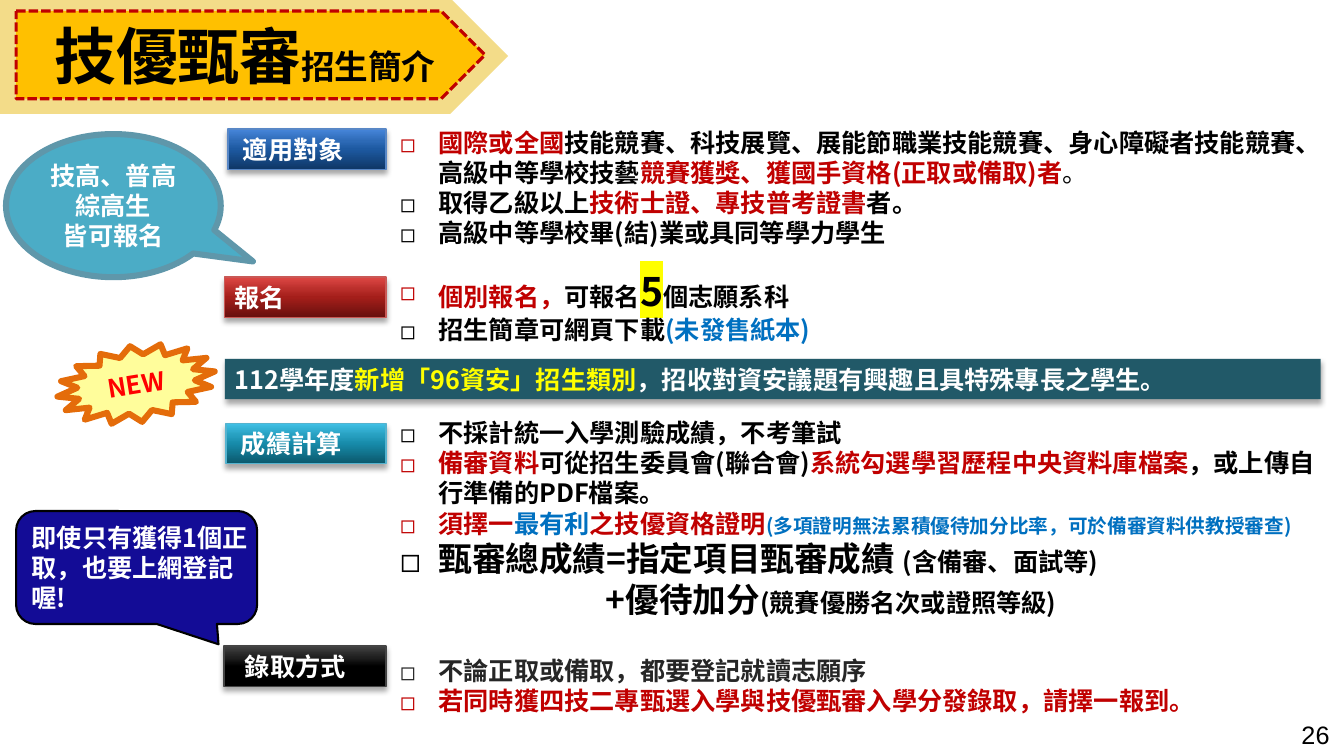
from collections import namedtuple
from pptx import Presentation
from pptx.dml.color import RGBColor as Rgb
from pptx.enum.dml import MSO_LINE as Dash
from pptx.enum.shapes import MSO_SHAPE as Kind
from pptx.enum.text import MSO_ANCHOR as Anchor, PP_ALIGN as Align
from pptx.oxml import parse_xml
from pptx.oxml.ns import nsdecls
from pptx.util import Inches, Pt

Box = namedtuple("Box", "col row wide high")
UNIT = 0.1  # one grid cell, in inches
LEFT, MID = Align.LEFT, Align.CENTER


class Theme:
    font, plain = "Noto Sans CJK SC", "Arial"
    note, body, head, big, title = 14, 18, 24, 28, 44
    lead = 1.2  # line height per type size
    ink, white, dark = "000000", "FFFFFF", "262626"
    red, blue, yellow = "C00000", "0070C0", "FFFF00"
    sand, gold = "F3DC89", "FFC000"
    aqua, rim, navy = "4BACC6", "5F97AA", "130C96"
    lemon, amber, alert, teal = "FFFD9B", "E46C0A", "FF0000", "215968"
    stops = (0, 50, 70, 100)
    tints = {
        "blue": ("0F3766", "1D59A1", "2D6AB6", "4786DB", "5887C6"),
        "red": ("68100E", "A41E1A", "B92E2A", "DF4845", "C95956"),
        "cyan": ("0B586C", "178BAA", "279FC0", "41C1E6", "54B3CF"),
        "black": ("000000", "000000", "1D1D1D", "424242", "444444"),
    }


T = Theme


def node(xml):
    return parse_xml(xml.replace(">", f" {nsdecls('a')}>", 1)
                     if "/>" not in xml.split(">")[0] + ">"
                     else xml.replace("/>", f" {nsdecls('a')}/>", 1))


def span(box):
    return [Inches(n * UNIT) for n in box]


def put(item, form):
    for key, val in form.items():
        setattr(item, key, val)


def frame(shape, pad=1, align_mid=True, wrap=True):
    put(shape.text_frame, {
        "word_wrap": wrap, "margin_left": Inches(pad * UNIT),
        "margin_right": 0, "margin_top": 0, "margin_bottom": 0,
        "vertical_anchor": Anchor.MIDDLE if align_mid else Anchor.TOP})


def write(para, runs, align=LEFT, font=T.font, bold=True):
    """Each run is text, colour, size, weight and highlight."""
    sizes = []
    for run in runs:
        text, hue, size, heavy, mark = (*run, *(T.ink, T.body, bold, None)[len(run) - 1:])
        part = para.add_run()
        part.text = text
        put(part.font, {"size": Pt(size), "bold": heavy, "name": font})
        part.font.color.rgb = Rgb.from_string(hue)
        latin = part.font._element.find(".//{*}latin")
        latin.addnext(node(f'<a:ea typeface="{font}"/>'))
        if mark:
            latin.addprevious(node(f'<a:highlight><a:srgbClr val="{mark}"/></a:highlight>'))
        sizes.append(size)
    put(para, {"alignment": align, "line_spacing": Pt(T.lead * max(sizes)),
               "space_before": Pt(0), "space_after": Pt(0)})


def shape(slide, kind, box, fill=None, line=None, width=1, adj=()):
    item = slide.shapes.add_shape(kind, *span(box))
    item.shadow.inherit = False
    if fill:
        item.fill.solid()
        item.fill.fore_color.rgb = Rgb.from_string(fill)
    if line:
        item.line.color.rgb = Rgb.from_string(line)
        item.line.width = Pt(width)
    else:
        item.line.fill.background()
    for num, val in enumerate(adj):
        item.adjustments[num] = val
    return item


def shade(item):
    item._element.spPr.find("{*}effectLst").append(node(
        '<a:outerShdw blurRad="50800" dist="38100" dir="5400000" rotWithShape="0">'
        '<a:srgbClr val="000000"><a:alpha val="35000"/></a:srgbClr></a:outerShdw>'))


def indent(para, left, hang=0):
    prop = para._p.get_or_add_pPr()
    prop.set("marL", str(Inches(left * UNIT)))
    prop.set("indent", str(-Inches(hang * UNIT)))
    if hang:
        prop.append(node(f'<a:buFont typeface="{T.font}"/>'))
        prop.append(node('<a:buChar char="◻"/>'))


# Title banner
def banner(slide, box):
    shape(slide, Kind.PENTAGON, box, T.sand)
    inner = Box(box.col + 1.6, box.row + 1.3, box.wide - 3.9, box.high - 2.8)
    plate = shape(slide, Kind.PENTAGON, inner, T.gold, T.red, 2.25)
    plate.line.dash_style = Dash.SQUARE_DOT
    title = slide.shapes.title
    put(title, dict(zip(("left", "top", "width", "height"), span(inner))))
    frame(title, 3.8)
    write(title.text_frame.paragraphs[0],
          [("技優甄審", T.ink, T.title), ("招生簡介", T.ink, T.head)])
    slide.shapes.element.append(title.element)  # bring to front


# Topic label with its list
def topic(slide, box, name, tint, pad, drop, items):
    *hues, edge = T.tints[tint]
    label = shape(slide, Kind.RECTANGLE, Box(box.col, box.row, 38.3 - box.col, 4), None, edge)
    stops = "".join(f'<a:gs pos="{pos * 1000}"><a:srgbClr val="{hue}"/></a:gs>'
                    for pos, hue in zip(T.stops, hues))
    label._element.spPr.find("{*}prstGeom").addnext(node(
        f'<a:gradFill rotWithShape="1"><a:gsLst>{stops}</a:gsLst>'
        '<a:lin ang="16200000" scaled="0"/></a:gradFill>'))
    shade(label)
    frame(label, pad)
    write(label.text_frame.paragraphs[0], [(name, T.white)])

    left = 38.7
    area = slide.shapes.add_textbox(*span(
        Box(left, box.row + drop, box.col + box.wide - left, box.high)))
    frame(area, 1, False)
    for num, (deep, runs) in enumerate(items):
        text = area.text_frame
        para = text.add_paragraph() if num else text.paragraphs[0]
        write(para, runs)
        indent(para, deep or 3.8, 0 if deep else 3.8)


# Callout, burst or bar holding one text
def note(slide, kind, box, look, lines, align=MID, pad=0, turn=0, wrap=True):
    item = shape(slide, kind, box, *look)
    item.rotation = turn
    frame(item, pad, wrap=wrap)
    for num, runs in enumerate(lines):
        text = item.text_frame
        write(text.add_paragraph() if num else text.paragraphs[0], runs, align)
    return item


# Page number
def folio(slide, box, num):
    area = slide.shapes.add_textbox(*span(box))
    frame(area)
    write(area.text_frame.paragraphs[0], [(num,)], font=T.plain, bold=False)


# Box, label, tint, label padding, list drop, list items (indent, runs)
TOPICS = [
    (Box(22.6, 12.8, 108.6, 12.2), "適用對象", "blue", 1.5, -0.2, [
        (0, [("國際或全國", T.red),
             ("技能競賽、科技展覽、展能節職業技能競賽、身心障礙者技能競賽、高級中等學校技藝",),
             ("競賽獲獎、獲國手資格(正取或備取)者", T.red), ("。", T.ink, T.body, False)]),
        (0, [("取得乙級以上",), ("技術士證、專技普考證書", T.red), ("者。",)]),
        (0, [("高級中等學校畢(結)業或具同等學力學生",)])]),
    (Box(22.3, 27.5, 108.9, 8), "報名", "red", 1, -1, [
        (0, [("個別報名，", T.red), ("可報名",),
             ("5", T.ink, T.big, True, T.yellow), ("個志願系科",)]),
        (0, [("招生簡章可網頁下載",), ("(未發售紙本)", T.blue)])]),
    (Box(22.4, 42, 108.8, 20), "成績計算", "cyan", 1.5, -0.6, [
        (0, [("不採計統一入學測驗成績，不考筆試",)]),
        (0, [("備審資料", T.red), ("可從招生委員會(聯合會)",),
             ("系統勾選學習歷程中央資料庫檔案", T.red), ("，或上傳自行準備的PDF檔案。",)]),
        (0, [("須擇一", T.red), ("最有利", T.blue), ("之技優資格證明", T.red),
             ("(多項證明無法累積優待加分比率，可於備審資料供教授審查)", T.blue, T.note)]),
        (0, [("甄審總成績=指定項目甄審成績 ", T.ink, T.head), ("(含備審、面試等)",)]),
        (20.4, [("+優待加分", T.ink, T.head), ("(競賽優勝名次或證照等級)",)])]),
    (Box(22.2, 64.1, 109, 6), "錄取方式", "black", 2.1, 0.9, [
        (0, [("不論正取或備取，都要登記就讀志願序", T.dark)]),
        (0, [("若同時獲四技二專甄選入學與技優甄審入學分發錄取，請擇一報到。", T.red)])]),
]


def main():
    deck = Presentation()
    put(deck, {"slide_width": Inches(13.33), "slide_height": Inches(7.5)})
    slide = deck.slides.add_slide(deck.slide_layouts[5])
    folio(slide, Box(128.1, 70.9, 5.2, 4), "26")
    banner(slide, Box(0, -0.2, 50.4, 11.5))
    for row in TOPICS:
        topic(slide, *row)
    note(slide, Kind.OVAL_CALLOUT, Box(0.6, 13.3, 21.3, 14.2),
         (T.aqua, T.rim, 4.33, (0.65, 0.39)),
         [[(text, T.white)] for text in ("技高、普高", "綜高生", "皆可報名")])
    note(slide, Kind.STAR_16_POINT, Box(5.6, 34.3, 15.8, 7.6),
         (T.lemon, T.amber, 4.33), [[("NEW", T.alert)]], turn=350.9, wrap=False)
    shade(note(slide, Kind.RECTANGLE, Box(22.3, 35.6, 108.7, 4), (T.teal,),
               [[("112學年度", T.white), ("新增「96資安」招生類別", T.yellow),
                 ("，招收對資安議題有興趣且具特殊專長之學生。", T.white)]], LEFT, 1))
    note(slide, Kind.ROUNDED_RECTANGULAR_CALLOUT, Box(1.6, 50.7, 23.9, 11.2),
         (T.navy, T.ink, 1.5, (0.34, 0.68, 0.17)),
         [[("即使只有獲得1個正取，也要上網登記喔!", T.white)]], LEFT, 1)
    deck.save("out.pptx")


if __name__ == "__main__":
    main()
